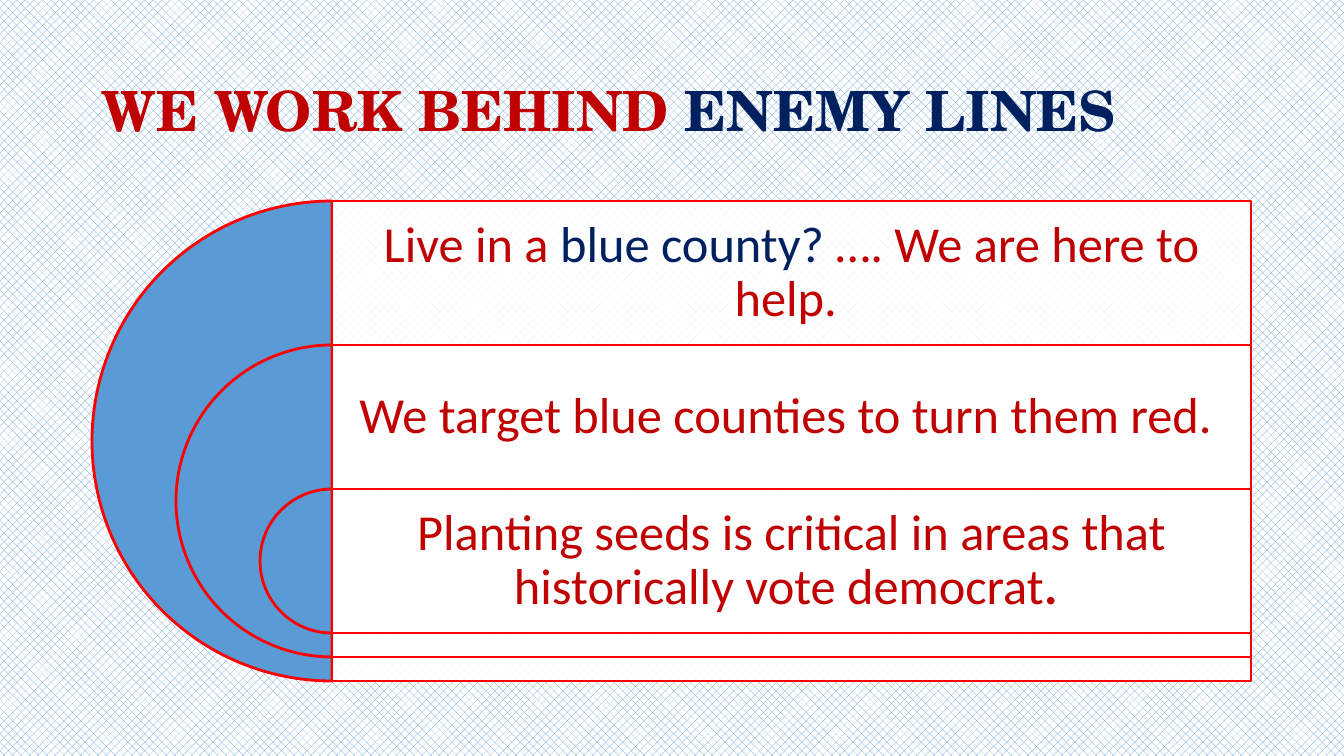
from lxml.etree import SubElement
from pptx import Presentation
from pptx.dml.color import RGBColor
from pptx.enum.dml import MSO_PATTERN
from pptx.enum.shapes import MSO_SHAPE
from pptx.enum.text import MSO_ANCHOR, PP_ALIGN
from pptx.oxml.ns import qn
from pptx.util import Pt

SLIDE_WIDTH, SLIDE_HEIGHT = 1344, 756
EMU_PER_PX = 12192000 / SLIDE_WIDTH

RED, NAVY, BLUE = "C00000", "002060", "5B9BD5"
OUTLINE, WHITE = "FF0000", "FFFFFF"

TITLE = [("WE WORK BEHIND ", RED, True), ("ENEMY LINES", NAVY, True)]
MESSAGES = [
    [("Live in a ", RED, False), ("blue county? ", NAVY, False),
     ("…. We are here to help. ", RED, False)],
    [("We target blue counties to turn them red. ", RED, False)],
    [("Planting seeds is critical in areas that historically vote democrat", RED, False),
     (". ", RED, True)],
]


def px(length):
    return round(length * EMU_PER_PX)


def color(hex_string):
    return RGBColor.from_string(hex_string)


def add_text(slide, box, runs, *, font, size, align=PP_ALIGN.LEFT, inset=10):
    """Place one paragraph of (text, color, bold) runs in a box."""
    shape = slide.shapes.add_textbox(*map(px, box))
    frame = shape.text_frame
    frame.word_wrap = True
    frame.vertical_anchor = MSO_ANCHOR.MIDDLE
    frame.margin_left = frame.margin_right = px(inset)
    frame.margin_top = frame.margin_bottom = px(inset)
    paragraph = frame.paragraphs[0]
    paragraph.alignment = align
    paragraph.line_spacing = 0.9
    for text, hex_string, bold in runs:
        run = paragraph.add_run()
        run.text = text
        run.font.name = font
        run.font.size = Pt(size)
        run.font.bold = bold
        run.font.color.rgb = color(hex_string)


def add_outlined(slide, kind, box, *, fill, line_width, opacity=100):
    shape = slide.shapes.add_shape(kind, *map(px, box))
    shape.shadow.inherit = False
    shape.fill.solid()
    shape.fill.fore_color.rgb = color(fill)
    shape.line.color.rgb = color(OUTLINE)
    shape.line.width = Pt(line_width)
    if opacity < 100:
        fill_color = shape.element.spPr.find(qn("a:solidFill"))[0]
        SubElement(fill_color, qn("a:alpha"), val=str(opacity * 1000))
    return shape


def add_background(slide):
    fill = slide.background.fill
    fill.patterned()
    fill.pattern = MSO_PATTERN.from_xml("pct40")
    fill.fore_color.rgb = color(BLUE)
    fill.back_color.rgb = color(WHITE)


def add_target_list(slide, box, messages):
    """Nested half circles, each opening onto a message panel."""
    left, top, width, height = box
    center = left + height // 2
    panel_width = left + width - center
    row_height = height * 3 // 10
    for index, message in enumerate(messages):
        row_top = top + index * row_height
        diameter = height * (100 - 35 * index) // 100

        # Left half of a circle
        half_circle = add_outlined(
            slide, MSO_SHAPE.PIE,
            (center - diameter // 2, row_top, diameter, diameter),
            fill=BLUE, line_width=2)
        half_circle.adjustments[0] = 54
        half_circle.adjustments[1] = 162

        # Panel and its message
        add_outlined(slide, MSO_SHAPE.RECTANGLE,
                     (center, row_top, panel_width, diameter),
                     fill=WHITE, line_width=1, opacity=90)
        add_text(slide, (center, row_top, panel_width, row_height), message,
                 font="Calibri", size=36, align=PP_ALIGN.CENTER, inset=15)


def main():
    presentation = Presentation()
    presentation.slide_width = px(SLIDE_WIDTH)
    presentation.slide_height = px(SLIDE_HEIGHT)
    slide = presentation.slides.add_slide(presentation.slide_layouts[6])
    add_background(slide)
    add_text(slide, (92, 40, 1159, 146), TITLE, font="TeX Gyre Schola", size=39.6)
    add_target_list(slide, (92, 201, 1159, 480), MESSAGES)
    presentation.save("out.pptx")


if __name__ == "__main__":
    main()
